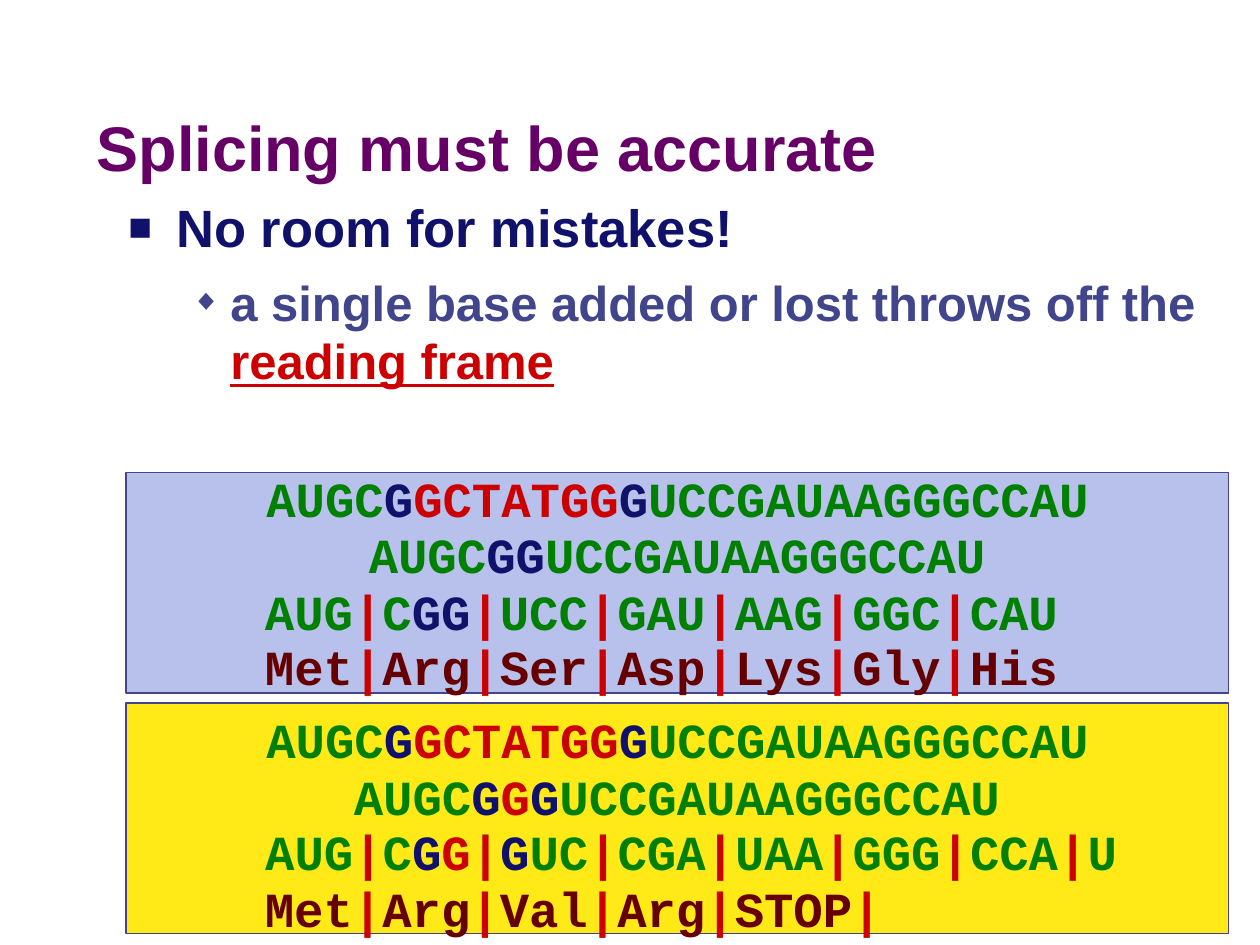
from itertools import groupby

from lxml import etree
from pptx import Presentation
from pptx.dml.color import RGBColor
from pptx.enum.shapes import MSO_SHAPE
from pptx.enum.text import MSO_ANCHOR, MSO_AUTO_SIZE, PP_ALIGN
from pptx.oxml.ns import qn
from pptx.util import Inches, Pt

RECTANGLE = MSO_SHAPE.RECTANGLE
MIDDLE = MSO_ANCHOR.MIDDLE
FIT_SHAPE = MSO_AUTO_SIZE.SHAPE_TO_FIT_TEXT
CENTER = PP_ALIGN.CENTER

COLORS = {
    "title": "660066", "navy": "0F116A", "slate": "40458C", "red": "CC0000",
    "green": "008000", "maroon": "660000", "lilac": "B7C1EB",
    "yellow": "FFEA18", "white": "FFFFFF",
}
PANEL_LEFT, PANEL_WIDTH = 1, 8.75
CODON_LEFT = 2
ROW_HEIGHT = 0.57
CHAR_WIDTH = 0.2334  # one 28 pt monospaced letter
INSET = 0.1


def color(name):
    return RGBColor.from_string(COLORS[name])


def merge_runs(letters):
    """Join neighbouring (letter, colour) pairs of one colour into runs."""
    return [("".join(letter for letter, _ in group), name)
            for name, group in groupby(letters, key=lambda pair: pair[1])]


def split_codons(runs):
    """Put a red bar after every third base."""
    bases = [(base, name) for text, name in runs for base in text]
    letters = []
    for index, base in enumerate(bases):
        if index and index % 3 == 0:
            letters.append(("|", "red"))
        letters.append(base)
    return merge_runs(letters)


def amino_runs(text):
    return merge_runs((letter, "red" if letter == "|" else "maroon")
                      for letter in text)


class SlideBuilder:
    def __init__(self, page):
        self.page = page
        self.heading_font = "Arial"
        self.sequence_font = "Courier New"

    def add_spans(self, para, runs, size, font):
        for text, name in runs:
            span = para.add_run()
            span.text = text
            span.font.size = Pt(size)
            span.font.name = font
            span.font.bold = True
            span.font.color.rgb = color(name)

    def text_box(self, left, top, width, height):
        box = self.page.shapes.add_textbox(
            Inches(left), Inches(top), Inches(width), Inches(height))
        box.text_frame.word_wrap = True
        return box.text_frame

    def title(self, text):
        frame = self.text_box(0.67, 0.75, 8.5, 0.83)
        frame.vertical_anchor = MIDDLE
        self.add_spans(frame.paragraphs[0], [(text, "title")], 36,
                       self.heading_font)

    def bullet(self, para, runs, size, mark, mark_percent, indent, hanging,
               space):
        para.space_before = Pt(space)
        self.add_spans(para, runs, size, self.heading_font)
        properties = para._p.get_or_add_pPr()
        properties.set("marL", str(Inches(indent)))
        properties.set("indent", str(-Inches(hanging)))
        tint = etree.SubElement(properties, qn("a:buClr"))
        etree.SubElement(tint, qn("a:srgbClr"), val=COLORS[runs[0][1]])
        etree.SubElement(properties, qn("a:buSzPct"),
                         val=str(mark_percent * 1000))
        etree.SubElement(properties, qn("a:buFont"), typeface="Arial")
        etree.SubElement(properties, qn("a:buChar"), char=mark)

    def panel(self, top, height, fill):
        shape = self.page.shapes.add_shape(
            RECTANGLE, Inches(PANEL_LEFT), Inches(top),
            Inches(PANEL_WIDTH), Inches(height))
        shape.shadow.inherit = False
        shape.fill.solid()
        shape.fill.fore_color.rgb = color(fill)
        shape.line.color.rgb = color("slate")
        shape.line.width = Pt(0.75)

    def sequence(self, runs, top, left=None):
        """Draw one sequence, centred on the panel unless left is given."""
        width = sum(len(text) for text, _ in runs) * CHAR_WIDTH + 2 * INSET
        if left is None:
            left = PANEL_LEFT + (PANEL_WIDTH - width) / 2
        frame = self.text_box(left, top, round(width, 2), ROW_HEIGHT)
        frame.word_wrap = False
        frame.auto_size = FIT_SHAPE
        frame.vertical_anchor = MIDDLE
        para = frame.paragraphs[0]
        para.alignment = CENTER
        para.space_before = Pt(9)
        self.add_spans(para, runs, 28, self.sequence_font)


def main():
    deck = Presentation()
    deck.slide_width, deck.slide_height = Inches(10), Inches(7.5)
    page = deck.slides.add_slide(deck.slide_layouts[6])
    page.background.fill.solid()
    page.background.fill.fore_color.rgb = color("white")
    builder = SlideBuilder(page)

    # Heading and bullets
    builder.title("Splicing must be accurate")
    body = builder.text_box(0.92, 1.5, 9.08, 2.33)
    builder.bullet(body.paragraphs[0], [("No room for mistakes!", "navy")],
                   30, "■", 75, 0.38, 0.38, 3.6)
    detail = body.add_paragraph()
    detail.level = 1
    builder.bullet(detail, [("a single base added or lost throws off the ",
                             "slate"), ("reading frame", "red")],
                   28, "◆", 60, 0.81, 0.31, 8)
    detail.runs[-1].font.underline = True

    # Splicing examples: correct, then one base left over
    start, end = ("AUGC", "green"), ("UCCGAUAAGGGCCAU", "green")
    donor = acceptor = ("G", "navy")
    unspliced = [start, donor, ("GCTATGG", "red"), acceptor, end]
    examples = [
        (3.75, 1.75, "lilac", [start, ("GG", "navy"), end],
         "Met|Arg|Ser|Asp|Lys|Gly|His", (3.67, 4.11, 4.56, 5)),
        (5.58, 1.83, "yellow", [start, donor, ("G", "red"), acceptor, end],
         "Met|Arg|Val|Arg|STOP|", (5.58, 6.03, 6.47, 6.92)),
    ]
    for top, height, fill, spliced, protein, rows in examples:
        builder.panel(top, height, fill)
        builder.sequence(unspliced, rows[0])
        builder.sequence(spliced, rows[1])
        builder.sequence(split_codons(spliced), rows[2], CODON_LEFT)
        builder.sequence(amino_runs(protein), rows[3], CODON_LEFT)

    deck.save("out.pptx")


if __name__ == "__main__":
    main()
